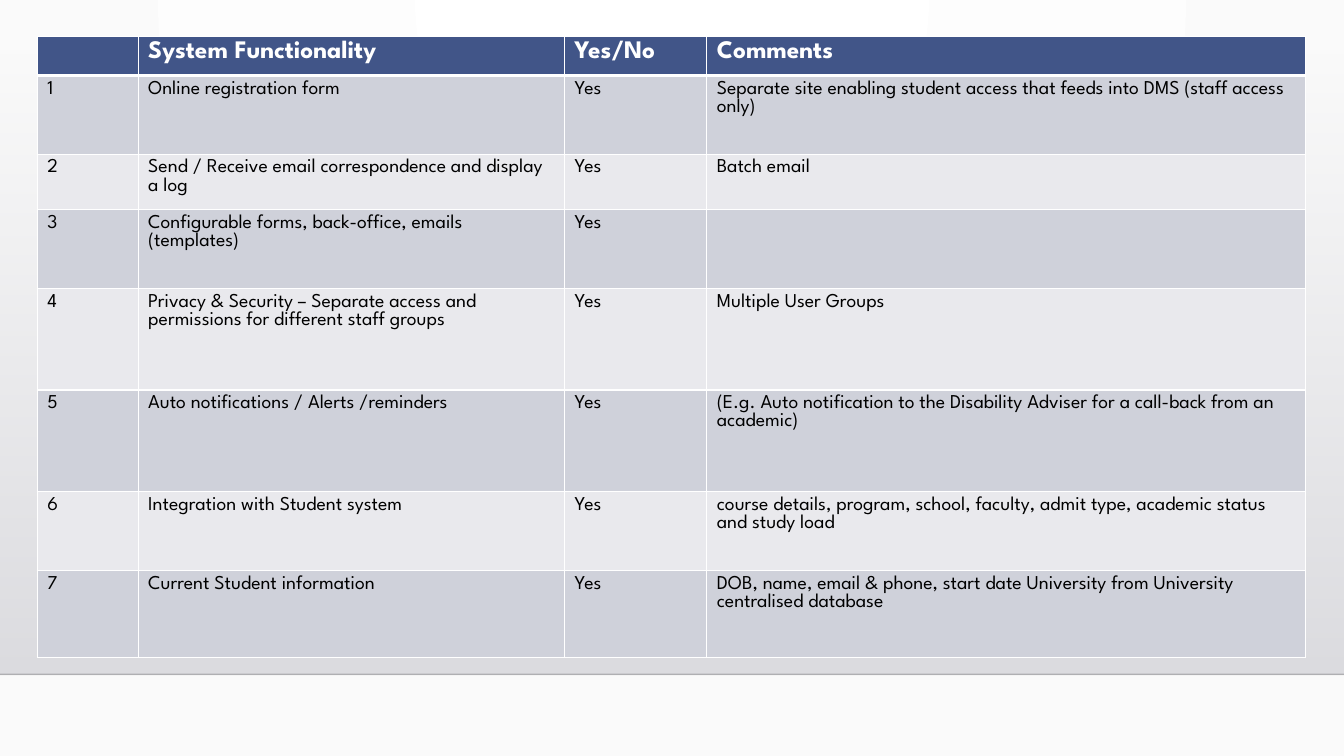
from lxml import etree
from pptx import Presentation
from pptx.dml.color import RGBColor
from pptx.enum import shapes
from pptx.oxml import ns, parse_xml
from pptx.util import Inches, Pt

# Content
HEADER = ["", "System Functionality", "Yes/No", "Comments"]
ITEMS = [
    ("Online registration form", "Yes",
     "Separate site enabling student access that feeds into DMS (staff access only)"),
    ("Send / Receive email correspondence and display a log", "Yes", "Batch email"),
    ("Configurable forms, back-office, emails (templates)", "Yes", ""),
    ("Privacy & Security – Separate access and permissions for different staff groups",
     "Yes", "Multiple User Groups"),
    ("Auto notifications / Alerts /reminders", "Yes",
     "(E.g. Auto notification to the Disability Adviser for a call-back from an academic)"),
    ("Integration with Student system", "Yes",
     "course details, program, school, faculty, admit type, academic status and study load"),
    ("Current Student information", "Yes",
     "DOB, name, email & phone, start date University from University centralised database"),
]
COL_WIDTHS = [1, 4.23, 1.41, 5.94]
ROW_HEIGHTS = [0.39, 0.78, 0.55, 0.78, 1.01, 1.01, 0.78, 0.86]

# Style
FONT = "League Spartan"
WHITE = RGBColor(0xFF, 0xFF, 0xFF)
BLACK = RGBColor(0, 0, 0)
NAVY = RGBColor(0x41, 0x55, 0x88)
BANDS = [RGBColor(0xCF, 0xD1, 0xDA), RGBColor(0xE9, 0xE9, 0xED)]
FLOOR_LINE = RGBColor(0, 0, 1)
WALL_TOP, FLOOR_Y = 0.51, 6.69
TABLE_LEFT, TABLE_TOP = 0.37, 0.36


def set_gradient(element, stops, direction):
    """Swap the first solid fill in element for a gradient of (pos, colour, opacity)."""
    gs = "".join(
        f'<a:gs pos="{pos * 1000}"><a:srgbClr val="{color}">'
        f'<a:alpha val="{opacity * 1000}"/></a:srgbClr></a:gs>'
        for pos, color, opacity in stops)
    solid = next(element.iter(ns.qn("a:solidFill")))
    solid.getparent().replace(solid, parse_xml(
        f'<a:gradFill {ns.nsdecls("a")} rotWithShape="1">'
        f"<a:gsLst>{gs}</a:gsLst>{direction}</a:gradFill>"))


def set_borders(cell, bottom=1, top=1):
    """Draw white borders, placed ahead of the cell fill."""
    tcPr = cell._tc.get_or_add_tcPr()
    widths = {"a:lnL": 1, "a:lnR": 1, "a:lnT": top, "a:lnB": bottom}
    for i, (tag, width) in enumerate(widths.items()):
        ln = etree.Element(ns.qn(tag), w=str(Pt(width)))
        fill = etree.SubElement(ln, ns.qn("a:solidFill"))
        etree.SubElement(fill, ns.qn("a:srgbClr"), val=str(WHITE))
        tcPr.insert(i, ln)


def write(tf, text, size=14, color=BLACK, bold=False):
    p = tf.paragraphs[0]
    p.font.size, p.font.name = Pt(size), FONT
    if text:
        r = p.add_run()
        r.text = text
        r.font.size, r.font.name, r.font.bold = Pt(size), FONT, bold
        r.font.color.rgb = color


prs = Presentation()
prs.slide_width, prs.slide_height = Inches(13.33), Inches(7.5)
s = prs.slides.add_slide(prs.slide_layouts[6])

# Background
s.background.fill.solid()
set_gradient(s.element, [(0, "FFFFFF", 100), (100, "FAFAFA", 100)],
             '<a:path path="circle"><a:fillToRect l="43000" r="43000" b="100000"/></a:path>')

# Shaded wall and floor line
wall = s.shapes.add_shape(shapes.MSO_SHAPE.RECTANGLE, 0, Inches(WALL_TOP),
                          prs.slide_width, Inches(FLOOR_Y - WALL_TOP))
wall.shadow.inherit = False
wall.line.fill.background()
wall.fill.solid()
set_gradient(wall._element.spPr, [(0, "DCDCE0", 0), (100, "DEDEE2", 100)],
             '<a:lin ang="5400000" scaled="0"/>')

floor = s.shapes.add_connector(shapes.MSO_CONNECTOR.STRAIGHT, 0, Inches(FLOOR_Y),
                               prs.slide_width, Inches(FLOOR_Y))
floor.line.width = Pt(1)
floor.line.color.rgb = FLOOR_LINE
spPr = floor._element.spPr
etree.SubElement(next(spPr.iter(ns.qn("a:srgbClr"))), ns.qn("a:alpha"), val="20000")
etree.SubElement(spPr, ns.qn("a:effectLst"))

# Requirements table
rows = [HEADER] + [[str(n), *item] for n, item in enumerate(ITEMS, 1)]
table = s.shapes.add_table(
    len(rows), len(HEADER), Inches(TABLE_LEFT), Inches(TABLE_TOP),
    Inches(sum(COL_WIDTHS)), Inches(sum(ROW_HEIGHTS))).table
for column, width in zip(table.columns, COL_WIDTHS):
    column.width = Inches(width)
for i, (row, height) in enumerate(zip(rows, ROW_HEIGHTS)):
    table.rows[i].height = Inches(height)
    for j, value in enumerate(row):
        cell = table.cell(i, j)
        cell.fill.solid()
        if i == 0:
            cell.fill.fore_color.rgb = NAVY
            write(cell.text_frame, value, size=18, color=WHITE, bold=True)
            set_borders(cell, bottom=3)
        else:
            cell.fill.fore_color.rgb = BANDS[(i - 1) % 2]
            write(cell.text_frame, value)
            set_borders(cell, top=3 if i == 1 else 1)

prs.save("out.pptx")
